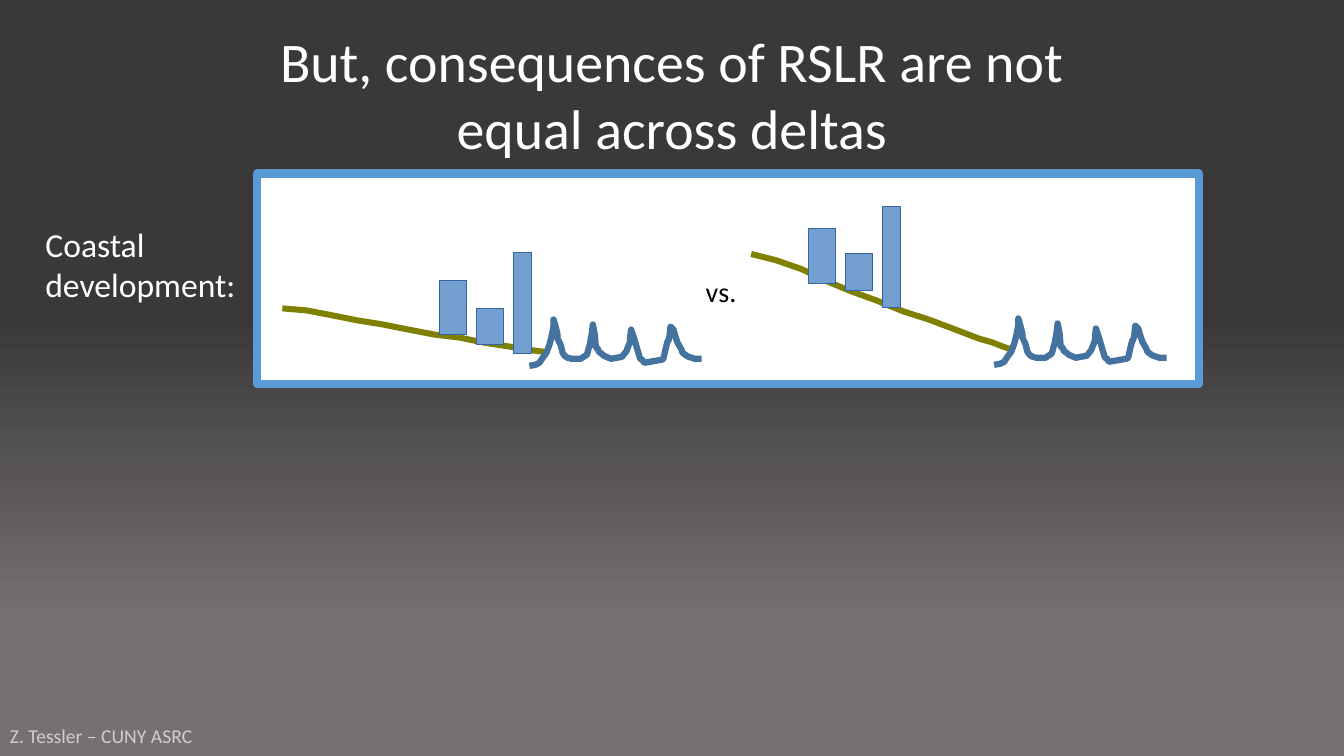
from pptx import Presentation
from pptx.dml.color import RGBColor
from pptx.enum.shapes import MSO_SHAPE
from pptx.enum.text import MSO_ANCHOR, PP_ALIGN
from pptx.util import Inches, Pt

THEME = {
    "font": "Calibri",
    "title_size": 39.9, "label_size": 24, "versus_size": 20, "credit_size": 14,
    "light": "FFFFFF", "dark": "000000", "credit": "D0CECE",
    "sky": "3B3838", "ground": "767171",
    "frame": "5B9BD5", "land": "808000", "water": "43739E",
    "building": "729FCF", "building_edge": "3465A4",
    "frame_width": 6, "thin_width": 0.75, "land_width": 4.31, "water_width": 4.5,
}

TITLE = "But, consequences of RSLR are not equal across deltas"
LABEL = "Coastal development:"
VERSUS = "vs."
CREDIT = "Z. Tessler – CUNY ASRC"

FRAME = (2.55, 1.72, 9.34, 2.09)
BUILDING_SIZES = [(0.27, 0.54), (0.27, 0.36), (0.18, 1)]
BUILDING_STEP = 0.365

SCENES = [
    {
        "panel": (2.73, 1.99, 4.63, 1.63),
        "land": [(2.8, 3.06), (2.92, 3.07), (3.04, 3.08), (3.3, 3.13), (3.55, 3.18),
                 (3.8, 3.22), (4.05, 3.27), (4.31, 3.32), (4.56, 3.35), (4.8, 3.4),
                 (5.06, 3.44), (5.31, 3.48), (5.39, 3.49), (5.41, 3.5)],
        "first_building": 4.36, "roofs": [2.78, 3.06, 2.51],
        "water_shift": (0, 0),
    },
    {
        "panel": (7.3, 1.99, 4.4, 1.63),
        "land": [(7.45, 2.52), (7.57, 2.55), (7.69, 2.58), (7.95, 2.67), (8.2, 2.79),
                 (8.44, 2.89), (8.69, 2.98), (8.96, 3.09), (9.21, 3.17), (9.45, 3.26),
                 (9.71, 3.36), (9.85, 3.4), (9.95, 3.44), (10.04, 3.47), (10.06, 3.48)],
        "first_building": 8.02, "roofs": [2.27, 2.52, 2.05],
        "water_shift": (4.61, -0.01),
    },
]

WATER = [
    (5.25, 3.63), (5.31, 3.62), (5.35, 3.6), (5.39, 3.54), (5.42, 3.5), (5.45, 3.42),
    (5.47, 3.34), (5.48, 3.29), (5.49, 3.24), (5.49, 3.17), (5.5, 3.2), (5.53, 3.32),
    (5.53, 3.36), (5.56, 3.42), (5.57, 3.46), (5.58, 3.5), (5.6, 3.53), (5.63, 3.55),
    (5.67, 3.56), (5.76, 3.56), (5.82, 3.52), (5.83, 3.49), (5.84, 3.45), (5.85, 3.42),
    (5.86, 3.36), (5.87, 3.31), (5.88, 3.22), (5.9, 3.32), (5.91, 3.45), (5.93, 3.46),
    (5.94, 3.49), (5.98, 3.52), (5.99, 3.53), (6.06, 3.56), (6.17, 3.54), (6.2, 3.5),
    (6.21, 3.49), (6.25, 3.39), (6.25, 3.35), (6.26, 3.27), (6.29, 3.36), (6.34, 3.53),
    (6.35, 3.56), (6.37, 3.57), (6.39, 3.6), (6.56, 3.57), (6.58, 3.56), (6.6, 3.47),
    (6.62, 3.39), (6.63, 3.38), (6.64, 3.34), (6.65, 3.24), (6.68, 3.27), (6.7, 3.34),
    (6.72, 3.4), (6.76, 3.47), (6.77, 3.5), (6.81, 3.53), (6.83, 3.54), (6.89, 3.56),
    (6.96, 3.56),
]


def color(key):
    return RGBColor.from_string(THEME[key])


def set_line(shape, key, width):
    shape.shadow.inherit = False
    shape.line.color.rgb = color(key)
    shape.line.width = Pt(THEME[width])


def add_box(slide, place, fill, edge, width):
    box = slide.shapes.add_shape(MSO_SHAPE.RECTANGLE, *map(Inches, place))
    box.fill.solid()
    box.fill.fore_color.rgb = color(fill)
    set_line(box, edge, width)


def add_curve(slide, points, key, width):
    start, *rest = [(Inches(x), Inches(y)) for x, y in points]
    builder = slide.shapes.build_freeform(*start)
    builder.add_line_segments(rest, close=False)
    curve = builder.convert_to_shape()
    curve.fill.background()
    set_line(curve, key, width)


def add_text(slide, place, text, size, key, insets=(0.09, 0.04),
             align=PP_ALIGN.LEFT, anchor=MSO_ANCHOR.TOP):
    frame = slide.shapes.add_textbox(*map(Inches, place)).text_frame
    frame.word_wrap = True
    frame.vertical_anchor = anchor
    frame.margin_left = frame.margin_right = Inches(insets[0])
    frame.margin_top = frame.margin_bottom = Inches(insets[1])
    frame.text = text
    paragraph = frame.paragraphs[0]
    paragraph.alignment = align
    font = paragraph.runs[0].font
    font.name = THEME["font"]
    font.size = Pt(THEME[size])
    font.color.rgb = color(key)


def paint_background(slide):
    fill = slide.background.fill
    fill.gradient()
    fill.gradient_angle = 270
    for stop, position, key in zip(fill.gradient_stops, (0.42, 0.82), ("sky", "ground")):
        stop.position = position
        stop.color.rgb = color(key)


def add_scene(slide, scene):
    add_curve(slide, scene["land"], "land", "land_width")
    for index, (roof, size) in enumerate(zip(scene["roofs"], BUILDING_SIZES)):
        left = scene["first_building"] + index * BUILDING_STEP
        add_box(slide, (left, roof, *size), "building", "building_edge", "thin_width")
    dx, dy = scene["water_shift"]
    add_curve(slide, [(x + dx, y + dy) for x, y in WATER], "water", "water_width")


def main():
    deck = Presentation()
    deck.slide_width, deck.slide_height = Inches(13.33), Inches(7.5)
    slide = deck.slides.add_slide(deck.slide_layouts[6])
    paint_background(slide)
    add_text(slide, (0, 7.13, 3.13, 0.34), CREDIT, "credit_size", "credit", (0.1, 0.05))
    add_box(slide, FRAME, "light", "frame", "frame_width")
    for scene in reversed(SCENES):
        add_box(slide, scene["panel"], "light", "light", "thin_width")
    add_text(slide, (2.17, 0.3, 8.99, 1.25), TITLE, "title_size", "light", (0, 0),
             PP_ALIGN.CENTER, MSO_ANCHOR.MIDDLE)
    for scene in SCENES:
        add_scene(slide, scene)
    add_text(slide, (0.36, 2.18, 2.52, 1.09), LABEL, "label_size", "light")
    add_text(slide, (6.91, 2.68, 0.6, 0.34), VERSUS, "versus_size", "dark")
    deck.save("out.pptx")


if __name__ == "__main__":
    main()
